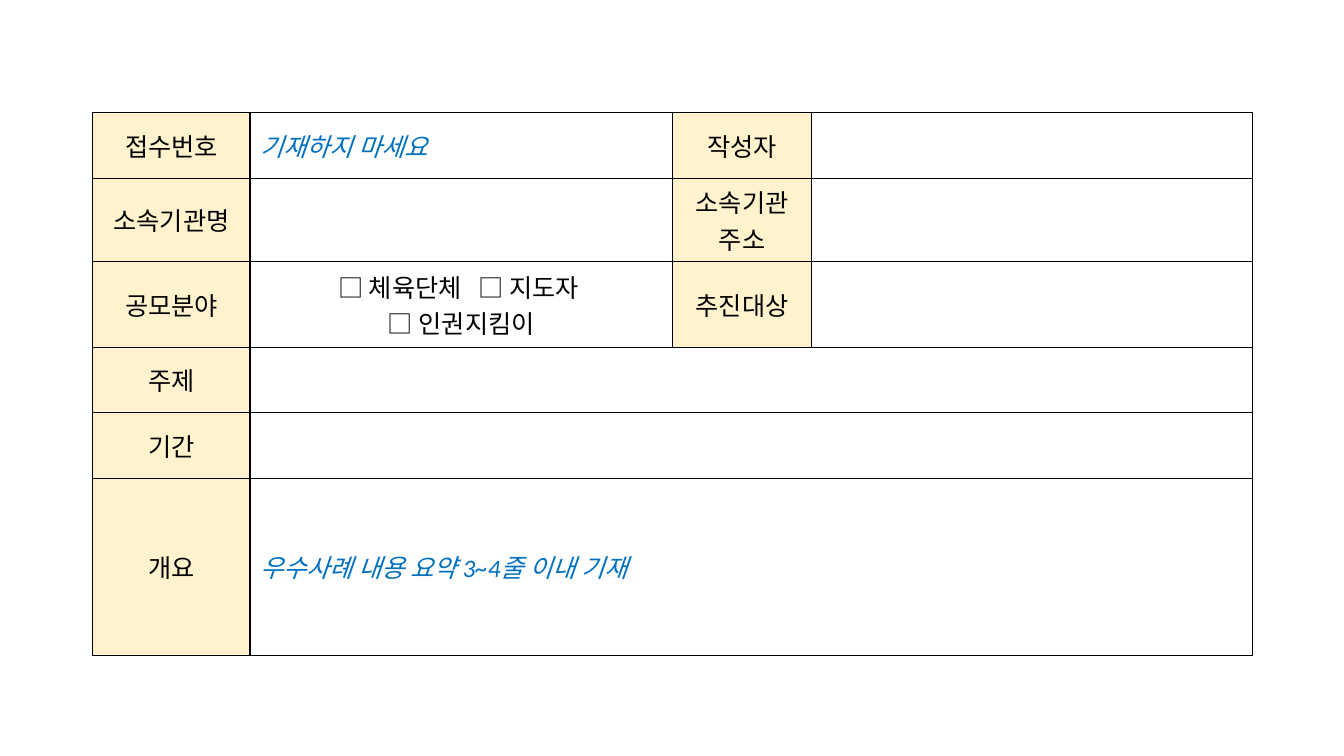
"""Build the application form slide."""
from lxml.etree import SubElement
from pptx import Presentation
from pptx.dml.color import RGBColor
from pptx.enum.text import MSO_ANCHOR, PP_ALIGN
from pptx.oxml.ns import qn
from pptx.util import Inches, Pt

BLACK = RGBColor(0x00, 0x00, 0x00)
HINT_BLUE = RGBColor(0x00, 0x70, 0xC0)
LABEL_CREAM = RGBColor(0xFF, 0xF2, 0xCC)
FONT = "Calibri"
COLUMN_WIDTHS = [1.56, 4.19, 1.38, 4.37]
ROW_HEIGHTS = [0.65, 0.82, 0.85, 0.65, 0.65, 1.76]
LEFT, TOP = 0.92, 1.12
LABELS = [
    ("접수번호", "작성자"),
    ("소속기관명", "소속기관 주소"),
    ("공모분야", "추진대상"),
    ("주제",),
    ("기간",),
    ("개요",),
]
HINTS = {0: "기재하지 마세요", 5: "우수사례 내용 요약 3~4줄 이내 기재"}
FIELD_OPTIONS = ["□ 체육단체", "□ 지도자"]
LAST_OPTION = "□ 인권지킴이"
OPTION_GAP = Pt(8)


def add_run(paragraph, text, color=BLACK, italic=False):
    """Add one formatted run and return it."""
    run = paragraph.add_run()
    run.text = text
    run.font.name = FONT
    run.font.size = Pt(18)
    run.font.color.rgb = color
    run.font.italic = italic
    return run


def add_option(paragraph, text):
    """Add a checkbox option followed by one widened space."""
    add_run(paragraph, text)
    gap = add_run(paragraph, " ")
    gap.font._element.set("spc", str(int(OPTION_GAP.pt * 100)))


def draw_borders(cell):
    """Give a cell a thin black line on every side."""
    properties = cell._tc.get_or_add_tcPr()
    for side in ("a:lnL", "a:lnR", "a:lnT", "a:lnB"):
        line = SubElement(properties, qn(side), w=str(Pt(1)))
        fill = SubElement(line, qn("a:solidFill"))
        SubElement(fill, qn("a:srgbClr"), val=str(BLACK))


def add_form_table(slide):
    """Add the empty bordered grid and return its table."""
    frame = slide.shapes.add_table(
        len(ROW_HEIGHTS), len(COLUMN_WIDTHS), Inches(LEFT), Inches(TOP),
        Inches(sum(COLUMN_WIDTHS)), Inches(sum(ROW_HEIGHTS)))
    table = frame.table
    table.first_row = False
    table.horz_banding = False
    for column, width in zip(table.columns, COLUMN_WIDTHS):
        column.width = Inches(width)
    for row, height in zip(table.rows, ROW_HEIGHTS):
        row.height = Inches(height)
    for cell in table.iter_cells():
        draw_borders(cell)
        cell.fill.background()
        cell.vertical_anchor = MSO_ANCHOR.MIDDLE
    return table


def fill_label(cell, text):
    """Shade a cell and centre its label."""
    cell.fill.solid()
    cell.fill.fore_color.rgb = LABEL_CREAM
    paragraph = cell.text_frame.paragraphs[0]
    paragraph.alignment = PP_ALIGN.CENTER
    add_run(paragraph, text)


def fill_options(cell):
    """Write the checkbox options on two centred lines."""
    first = cell.text_frame.paragraphs[0]
    second = cell.text_frame.add_paragraph()
    for paragraph in (first, second):
        paragraph.alignment = PP_ALIGN.CENTER
    for option in FIELD_OPTIONS:
        add_option(first, option)
    add_run(second, LAST_OPTION)


def main():
    """Build and save the form."""
    presentation = Presentation()
    presentation.slide_width = Inches(13.33)
    presentation.slide_height = Inches(7.5)
    slide = presentation.slides.add_slide(presentation.slide_layouts[6])
    table = add_form_table(slide)
    for row, labels in enumerate(LABELS):
        if len(labels) == 1:
            table.cell(row, 1).merge(table.cell(row, 3))
        for index, label in enumerate(labels):
            fill_label(table.cell(row, 2 * index), label)
    for row, hint in HINTS.items():
        paragraph = table.cell(row, 1).text_frame.paragraphs[0]
        add_run(paragraph, hint, HINT_BLUE, italic=True)
    fill_options(table.cell(2, 1))
    presentation.save("out.pptx")


if __name__ == "__main__":
    main()
